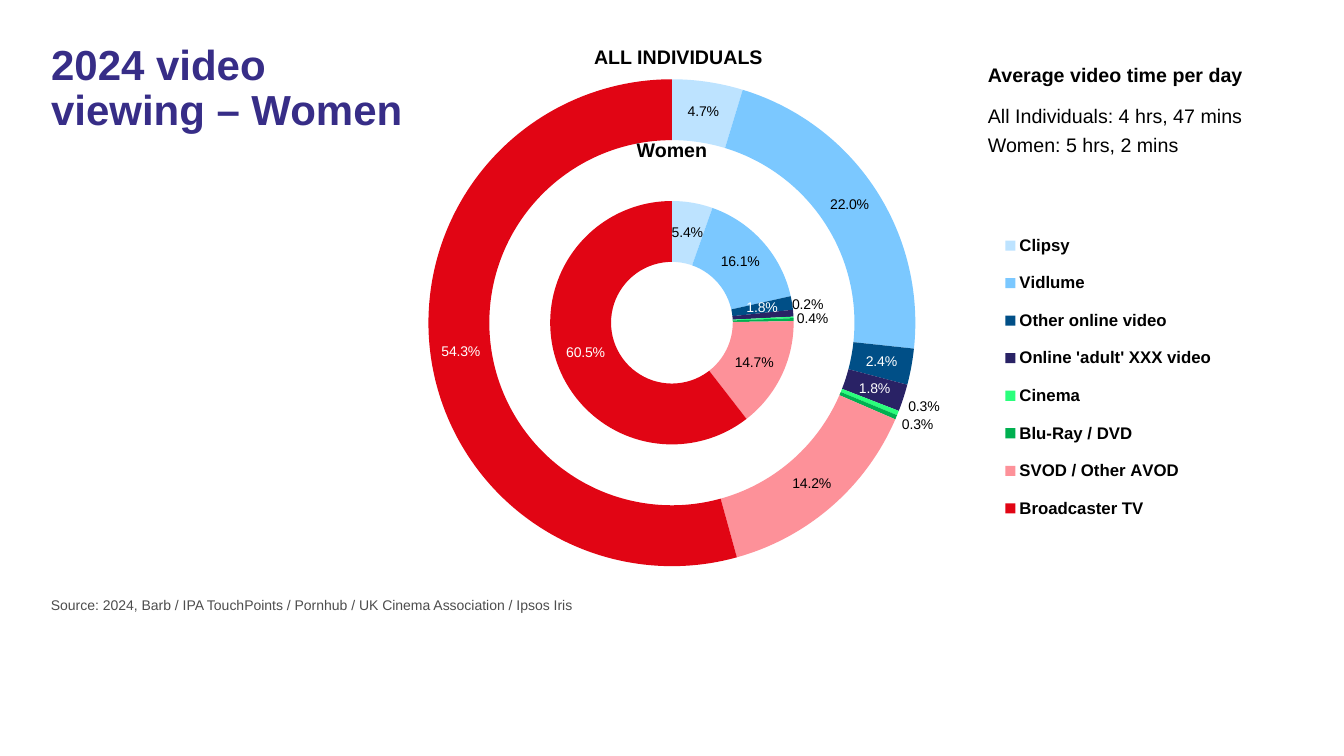
from dataclasses import dataclass

from lxml import etree
from pptx import Presentation
from pptx import util as u
from pptx.chart.data import CategoryChartData
from pptx.dml.color import RGBColor
from pptx.enum import chart as ch, text
from pptx.oxml import ns

TITLE = "2024 video viewing – Women"
SOURCE = ("Source: 2024, Barb / IPA TouchPoints / Pornhub / "
          "UK Cinema Association / Ipsos Iris")

# Category, slice colour, women %, all individuals %
VIEWING = [
    ("Clipsy", "BDE3FF", 5.4, 4.7),
    ("Vidlume", "7BC8FF", 16.1, 22.0),
    ("Other online video", "004F87", 1.8, 2.4),
    ("Online 'adult' XXX video", "292265", 0.9, 1.8),
    ("Cinema", "2AFF7C", 0.2, 0.3),
    ("Blu-Ray / DVD", "00B050", 0.4, 0.3),
    ("SVOD / Other AVOD", "FD9199", 14.7, 14.2),
    ("Broadcaster TV", "E10514", 60.5, 54.3),
]
WHITE_LABELS = {"Other online video", "Online 'adult' XXX video", "Broadcaster TV"}
UNLABELLED = {("Women", "Online 'adult' XXX video")}
# Shift of a label away from its slice, in px
LABEL_SHIFTS = {
    ("Women", "Cinema"): (45, -14),
    ("Women", "Blu-Ray / DVD"): (49, -2),
    ("All individuals", "Cinema"): (54, 5),
    ("All individuals", "Blu-Ray / DVD"): (49, 19),
}

# Words, box in px, format
CAPTIONS = [
    ("Average video time per day", (978, 58, 385, 34), {"bold": True}),
    ("All Individuals: 4 hrs, 47 mins", (978, 99, 301, 34), {}),
    ("Women: 5 hrs, 2 mins", (978, 128, 284, 34), {}),
    ("ALL INDIVIDUALS", (581, 40, 195, 34), {"bold": True, "centred": True}),
    ("Women", (602, 133, 140, 34), {"bold": True, "centred": True}),
]
TITLE_BOX = (41, 39, 385, 278)
SOURCE_BOX = (41, 592, 1250, 33)
CHART_BOX = (322, 16, 968, 613)
RINGS_BOX = (428, 74, 487, 497)
LEGEND_BOX = (998, 217, 222, 320)


@dataclass(frozen=True)
class Theme:
    font: str = "Arial"
    purple: str = "372D87"
    black: str = "000000"
    white: str = "FFFFFF"
    grey: str = "4D4D4D"
    title: int = 30
    caption: int = 14
    legend: int = 12
    small: int = 10


THEME = Theme()


def px(length):
    return round(length * 914400 / 100.8)


def set_font(font, size, colour=THEME.black, bold=False):
    font.name, font.size, font.bold = THEME.font, u.Pt(size), bold
    font.color.rgb = RGBColor.from_string(colour)


def write(shape, words, box, size=THEME.caption, colour=THEME.black,
          bold=False, centred=False, line_spacing=None):
    shape.left, shape.top, shape.width, shape.height = map(px, box)
    frame = shape.text_frame
    frame.word_wrap = True
    frame.auto_size = text.MSO_AUTO_SIZE.NONE
    frame.vertical_anchor = text.MSO_ANCHOR.TOP
    frame.text = words
    paragraph = frame.paragraphs[0]
    paragraph.alignment = text.PP_ALIGN.CENTER if centred else text.PP_ALIGN.LEFT
    paragraph.line_spacing = line_spacing
    set_font(paragraph.runs[0].font, size, colour, bold)


def chart_element(tag, **attributes):
    element = etree.Element(ns.qn("c:" + tag))
    for name, value in attributes.items():
        element.set(name, str(value))
    return element


def manual_layout(**settings):
    layout = chart_element("layout")
    manual = etree.SubElement(layout, ns.qn("c:manualLayout"))
    for tag, value in settings.items():
        manual.append(chart_element(tag, val=value))
    return layout


def box_layout(box, **target):
    """Layout of a box in px as fractions of the chart."""
    left, top, width, height = CHART_BOX
    return manual_layout(
        **target, xMode="edge", yMode="edge",
        x=round((box[0] - left) / width, 3), y=round((box[1] - top) / height, 3),
        w=round(box[2] / width, 3), h=round(box[3] / height, 3))


def format_label(point, ring, category):
    colour = THEME.white if category in WHITE_LABELS else THEME.black
    set_font(point.data_label.font, THEME.small, colour)
    index = [row[0] for row in VIEWING].index(category)
    label = ring.data_labels._element.xpath(f"c:dLbl[c:idx/@val='{index}']")[0]
    label.find(ns.qn("c:showVal")).set("val", "0")
    shown = (ring.name, category) not in UNLABELLED
    label.find(ns.qn("c:showPercent")).set("val", str(int(shown)))
    for position in label.findall(ns.qn("c:dLblPos")):
        label.remove(position)
    label.insert(1, chart_element("numFmt", formatCode="0.0%", sourceLinked=0))
    if (ring.name, category) in LABEL_SHIFTS:
        right, down = LABEL_SHIFTS[ring.name, category]
        label.insert(1, manual_layout(x=round(right / CHART_BOX[2], 3),
                                      y=round(down / CHART_BOX[3], 3)))


def format_ring(ring):
    labels = ring.data_labels
    labels.show_value, labels.show_percentage = False, True
    labels.number_format, labels.number_format_is_linked = "0.0%", False
    set_font(labels.font, THEME.small, THEME.white)
    for index, (category, colour, *_) in enumerate(VIEWING):
        point = ring.points[index]
        point.format.fill.solid()
        point.format.fill.fore_color.rgb = RGBColor.from_string(colour)
        point.format.line.fill.background()
        format_label(point, ring, category)
    for leader in labels._element.findall(ns.qn("c:showLeaderLines")):
        leader.set("val", "0")


def add_rings(slide):
    categories, _, women, everyone = zip(*VIEWING)
    data = CategoryChartData(number_format="0.0")
    data.categories = categories
    data.add_series("Women", women)
    data.add_series("Gap", [None] * len(categories))
    data.add_series("All individuals", everyone)
    chart = slide.shapes.add_chart(
        ch.XL_CHART_TYPE.DOUGHNUT, *map(px, CHART_BOX), data).chart
    set_font(chart.font, THEME.small)
    chart.has_title = False
    chart.has_legend = True
    chart.legend.position = ch.XL_LEGEND_POSITION.RIGHT
    chart.legend.include_in_layout = False
    set_font(chart.legend.font, THEME.legend, bold=True)

    plot = chart.plots[0]
    plot.vary_by_categories = True
    plot.has_data_labels = False
    for ring in plot.series:
        if ring.name != "Gap":
            format_ring(ring)

    plot_area = chart._chartSpace.xpath("c:chart/c:plotArea")[0]
    plot_area.xpath("c:doughnutChart/c:holeSize")[0].set("val", "47")
    legend = chart.legend._element
    for parent in (plot_area, legend):
        for layout in parent.findall(ns.qn("c:layout")):
            parent.remove(layout)
    plot_area.insert(0, box_layout(RINGS_BOX, layoutTarget="inner"))
    legend.insert(1, box_layout(LEGEND_BOX))


def main():
    deck = Presentation()
    deck.slide_width, deck.slide_height = px(1344), px(756)
    slide = deck.slides.add_slide(deck.slide_layouts[5])
    add_rings(slide)
    write(slide.shapes.title, TITLE, TITLE_BOX, size=THEME.title,
          colour=THEME.purple, bold=True, line_spacing=0.9)
    for words, box, style in CAPTIONS:
        write(slide.shapes.add_textbox(0, 0, 0, 0), words, box, **style)
    write(slide.shapes.add_textbox(0, 0, 0, 0), SOURCE, SOURCE_BOX,
          size=THEME.small, colour=THEME.grey)
    deck.save("out.pptx")


if __name__ == "__main__":
    main()
